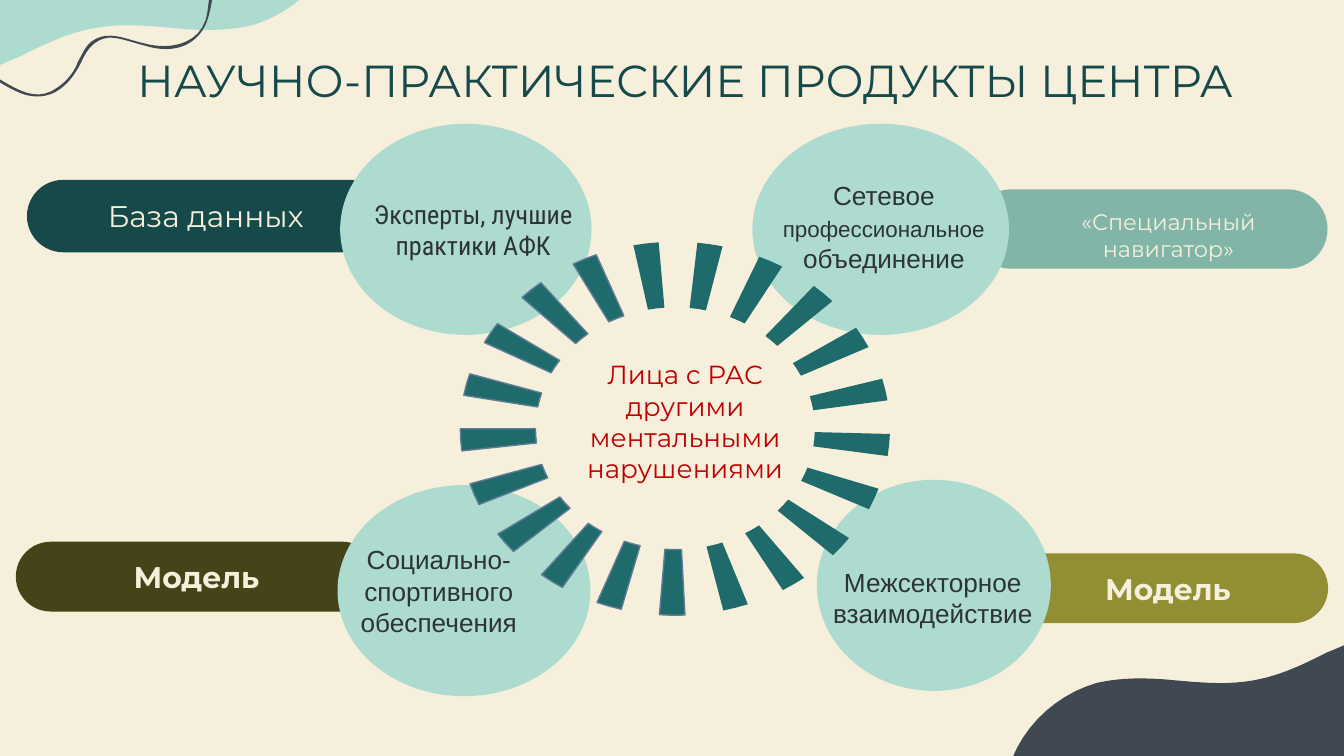
from dataclasses import dataclass
from math import cos, radians, sin
from typing import Any, NamedTuple

from pptx import Presentation
from pptx.dml.color import RGBColor as RGB
from pptx.enum.shapes import MSO_SHAPE as SHAPE
from pptx.enum.text import MSO_ANCHOR as ANCHOR, PP_ALIGN as ALIGN
from pptx.util import Cm, Pt


@dataclass(frozen=True)
class Theme:
    cream: str = "F6EFDC"
    mint: str = "ADDBD0"
    slate: str = "3F4853"
    forest: str = "164A4A"
    sage: str = "81B5A8"
    umber: str = "454318"
    olive: str = "928E33"
    teal: str = "1F6A6A"
    edge: str = "5F7D95"
    ink: str = "2E3338"
    red: str = "C00000"
    title: int = 24
    pill: int = 16
    body: int = 14
    small: int = 12
    display: str = "Montserrat"
    sans: str = "Arial"
    narrow: str = "Roboto Condensed"


T = Theme()


class Box(NamedTuple):
    x: float
    y: float
    w: float
    h: float


class Style(NamedTuple):
    size: int
    font: str
    color: str
    bold: bool = False


@dataclass(frozen=True)
class Pill:
    box: Box
    fill: str
    text: str = ""
    bold: bool = False


@dataclass(frozen=True)
class Label:
    box: Box
    lines: tuple[str, ...]
    style: Style
    anchor: Any = ANCHOR.MIDDLE
    inset: tuple[float, float] = (0, 0)
    wrap: bool = True


PILL_STYLE = Style(T.pill, T.display, T.cream)
BODY = Style(T.body, T.sans, T.ink)

PILLS = [
    Pill(Box(0.51, 3.4, 6.76, 1.37), T.forest, "База данных"),
    Pill(Box(18.36, 3.58, 6.73, 1.5), T.sage),
    Pill(Box(0.3, 10.24, 6.83, 1.32), T.umber, "Модель", True),
    Pill(Box(19.05, 10.46, 6.05, 1.32), T.olive, "Модель", True),
]
BUBBLES = [
    Box(6.43, 2.34, 4.75, 3.99),
    Box(6.38, 9.17, 4.78, 3.99),
    Box(14.22, 2.34, 4.85, 3.99),
    Box(15.44, 9.07, 4.42, 3.99),
]
NETWORK = Label(Box(14.71, 2.29, 3.99, 3.99), ("Сетевое ",), BODY)
LABELS = [
    Label(Box(6.76, 2.34, 4.37, 3.99), ("Эксперты, лучшие практики АФК",),
          Style(T.body, T.narrow, T.ink)),
    Label(Box(5.74, 9.17, 5.11, 3.99), ("Социально-спортивного обеспечения",), BODY),
    Label(Box(14.94, 9.09, 5.38, 4.42), ("Межсекторное взаимодействие",), BODY),
    Label(Box(19.94, 3.81, 4.29, 1.27), ("«Специальный", "навигатор»"),
          Style(T.small, T.display, T.cream), ANCHOR.TOP, (0.25, 0.13), False),
    Label(Box(10.41, 6.65, 5.08, 2.64), ("Лица с РАС другими ментальными нарушениями",),
          Style(T.body, T.display, T.red), ANCHOR.TOP, (0.25, 0.13)),
    Label(Box(0.03, 0.99, 25.83, 1.27), ("НАУЧНО-ПРАКТИЧЕСКИЕ ПРОДУКТЫ ЦЕНТРА",),
          Style(T.title, T.display, T.forest), ANCHOR.TOP),
]

CM_PER_INCH = 2.54
BLOB = [
    (-1.39, -0.37),
    (-1.4, -0.21, -1.38, -0.06, -1.32, 0.08), (-1.23, 0.29, -1.03, 0.45, -0.82, 0.52),
    (-0.79, 0.53, -0.77, 0.54, -0.74, 0.54), (-0.49, 0.6, -0.23, 0.57, 0.01, 0.48),
    (0.05, 0.46, 0.1, 0.44, 0.15, 0.42), (0.31, 0.34, 0.47, 0.26, 0.65, 0.22),
    (0.86, 0.17, 1.08, 0.19, 1.3, 0.21), (1.5, 0.23, 1.69, 0.23, 1.87, 0.19),
    (2.15, 0.11, 2.39, -0.1, 2.5, -0.37),
]
WAVE = [
    (1.92, -0.53),
    (1.8, -0.47, 1.71, -0.37, 1.65, -0.26), (1.61, -0.2, 1.59, -0.14, 1.57, -0.08),
    (1.55, 0, 1.55, 0.08, 1.53, 0.15), (1.46, 0.35, 1.23, 0.37, 1.06, 0.32),
    (0.93, 0.29, 0.8, 0.22, 0.68, 0.31), (0.63, 0.35, 0.61, 0.41, 0.58, 0.46),
    (0.55, 0.54, 0.5, 0.6, 0.43, 0.65), (0.27, 0.77, 0.12, 0.66, -0.02, 0.58),
    (-0.27, 0.43, -0.58, 0.49, -0.75, 0.71), (-0.78, 0.76, -0.81, 0.81, -0.83, 0.86),
    (-0.83, 0.87, -0.81, 0.88, -0.81, 0.87), (-0.76, 0.71, -0.63, 0.59, -0.48, 0.54),
    (-0.31, 0.47, -0.13, 0.52, 0.01, 0.62), (0.13, 0.69, 0.24, 0.75, 0.38, 0.7),
    (0.5, 0.65, 0.57, 0.54, 0.62, 0.43), (0.66, 0.35, 0.72, 0.29, 0.81, 0.28),
    (0.9, 0.28, 0.99, 0.32, 1.08, 0.34), (1.2, 0.38, 1.35, 0.38, 1.45, 0.29),
    (1.57, 0.19, 1.56, 0.04, 1.6, -0.09), (1.64, -0.24, 1.73, -0.38, 1.86, -0.47),
    (1.88, -0.49, 1.91, -0.5, 1.93, -0.52), (1.94, -0.52, 1.93, -0.54, 1.92, -0.53),
]

RAYS, FIRST_ANGLE, HALF_WIDTH = 21, 9.35, 3.4
OUTLINED = range(10, 20)
CENTER, OUTER, INNER = (12.76, 8.1), (4.06, 3.53), (2.64, 2.29)


def apply(obj: Any, values: dict[str, Any]) -> None:
    for name, value in values.items():
        setattr(obj, name, value)


def paint(sp: Any, fill: str, edge: str = "") -> None:
    sp.shadow.inherit = False
    sp.fill.solid()
    sp.fill.fore_color.rgb = RGB.from_string(fill)
    if edge:
        sp.line.color.rgb = RGB.from_string(edge)
        sp.line.width = Pt(0.75)
    else:
        sp.line.fill.background()


def add_run(p: Any, text: str, style: Style) -> None:
    r = p.add_run()
    r.text = text
    apply(r.font, {"size": Pt(style.size), "name": style.font, "bold": style.bold})
    r.font.color.rgb = RGB.from_string(style.color)


def write(sp: Any, lines: tuple[str, ...], style: Style, anchor: Any,
          inset: tuple[float, float], wrap: bool = True) -> Any:
    tf = sp.text_frame
    dx, dy = map(Cm, inset)
    apply(tf, {"word_wrap": wrap, "vertical_anchor": anchor, "margin_left": dx,
               "margin_right": dx, "margin_top": dy, "margin_bottom": dy})
    for i, line in enumerate(lines):
        p = tf.add_paragraph() if i else tf.paragraphs[0]
        p.alignment = ALIGN.CENTER
        add_run(p, line, style)
    return p


def add_preset(s: Any, kind: Any, box: Box, fill: str) -> Any:
    sp = s.shapes.add_shape(kind, *map(Cm, box))
    paint(sp, fill)
    return sp


def add_label(s: Any, label: Label) -> Any:
    sp = s.shapes.add_textbox(*map(Cm, label.box))
    return write(sp, label.lines, label.style, label.anchor, label.inset, label.wrap)


def add_outline(s: Any, points: list[tuple], fill: str, edge: str = "") -> Any:
    start, *rest = [(Cm(x), Cm(y)) for x, y in points]
    fb = s.shapes.build_freeform(*start, scale=1.0)
    fb.add_line_segments(rest, close=True)
    sp = fb.convert_to_shape()
    paint(sp, fill, edge)
    return sp


def trace(curves: list[tuple], steps: int = 10) -> list[tuple]:
    points = [curves[0]]
    for a, b, c, d, x, y in curves[1:]:
        x0, y0 = points[-1]
        for t in (i / steps for i in range(1, steps + 1)):
            u = 1 - t
            k = u**3, 3 * u * u * t, 3 * u * t * t, t**3
            points.append(tuple(sum(m * v for m, v in zip(k, axis))
                                for axis in ((x0, a, c, x), (y0, b, d, y))))
    return [(x * CM_PER_INCH, y * CM_PER_INCH) for x, y in points]


def on_ring(radii: tuple[float, float], angle: float) -> tuple[float, float]:
    a = radians(angle)
    return CENTER[0] + radii[0] * sin(a), CENTER[1] - radii[1] * cos(a)


def add_ray(s: Any, index: int) -> None:
    mid = FIRST_ANGLE + index * 360 / RAYS
    outer = [on_ring(OUTER, mid + k * HALF_WIDTH) for k in (-1, 0, 1)]
    inner = [on_ring(INNER, mid + k * HALF_WIDTH) for k in (1, 0, -1)]
    add_outline(s, outer + inner, T.teal, T.edge if index in OUTLINED else "")


def main() -> None:
    prs = Presentation()
    apply(prs, {"slide_width": Cm(25.4), "slide_height": Cm(14.29)})
    s = prs.slides.add_slide(prs.slide_layouts[6])
    s.background.fill.solid()
    s.background.fill.fore_color.rgb = RGB.from_string(T.cream)

    add_outline(s, trace(BLOB), T.mint)
    corner = add_outline(s, trace(BLOB), T.slate)
    apply(corner, {"left": Cm(19.13), "top": Cm(11.94), "rotation": 180})
    add_outline(s, trace(WAVE), T.slate)

    for pill in PILLS:
        sp = add_preset(s, SHAPE.ROUNDED_RECTANGLE, pill.box, pill.fill)
        sp.adjustments[0] = 0.5
        if pill.text:
            write(sp, (pill.text,), PILL_STYLE._replace(bold=pill.bold),
                  ANCHOR.MIDDLE, (0.25, 0.25))
    for box in BUBBLES:
        add_preset(s, SHAPE.OVAL, box, T.mint)
    for index in range(RAYS):
        add_ray(s, index)
    p = add_label(s, NETWORK)
    add_run(p, "профессиональное", BODY._replace(size=T.small))
    add_run(p, " объединение", BODY)
    for label in LABELS:
        add_label(s, label)
    prs.save("out.pptx")


if __name__ == "__main__":
    main()
